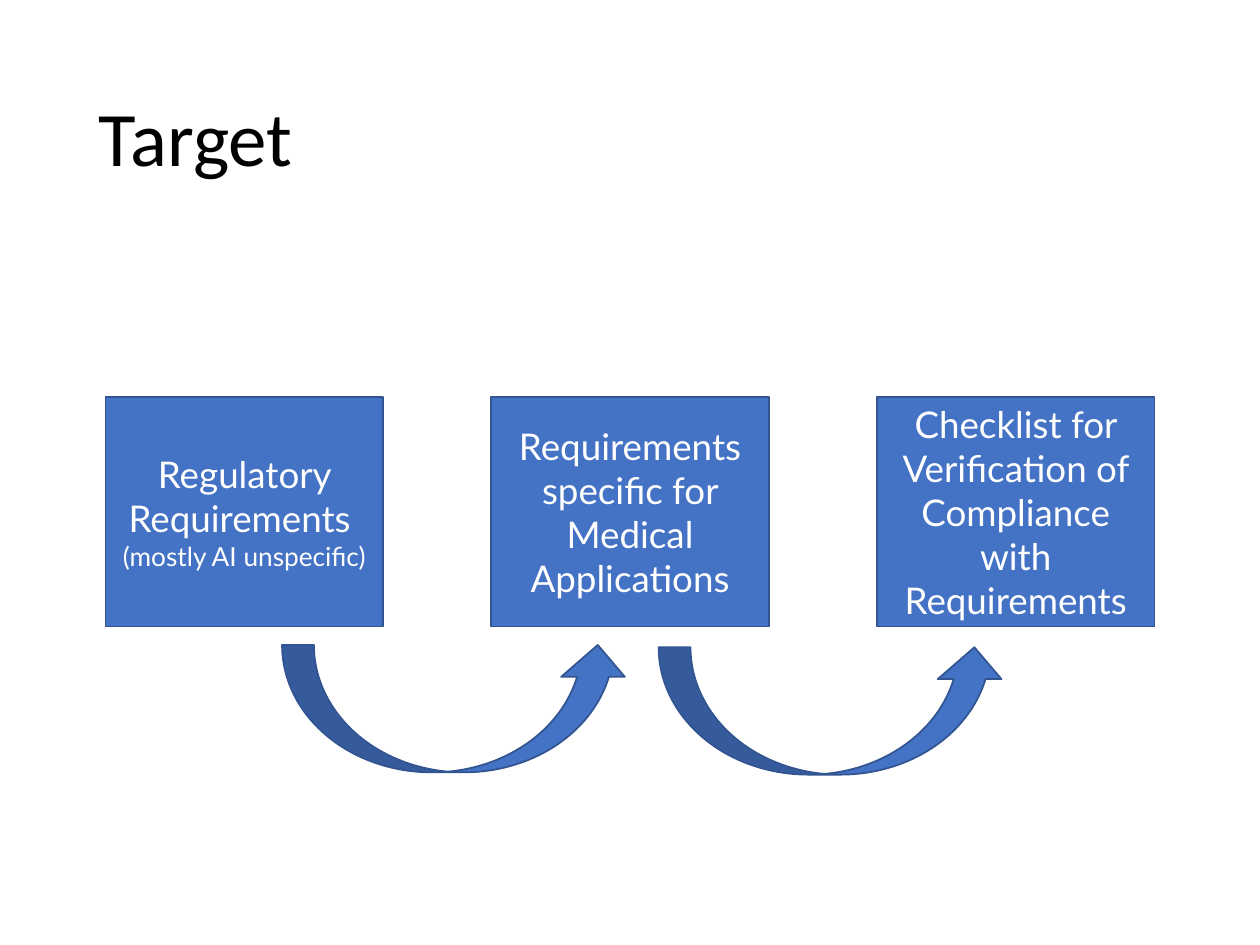
from pptx import Presentation
from pptx.dml.color import RGBColor
from pptx.enum.shapes import MSO_SHAPE
from pptx.enum.text import MSO_ANCHOR, PP_ALIGN
from pptx.util import Pt

COLORS = {"title": "000000", "fill": "4472C4", "line": "325491", "label": "FFFFFF"}


def write_text(shape, text, *, size, font, color, align, line_spacing=1.0,
               note=None, note_size=None):
    """Fill the shape with one centred-in-height paragraph; a note goes on a smaller new line."""
    frame = shape.text_frame
    frame.word_wrap = True
    frame.vertical_anchor = MSO_ANCHOR.MIDDLE
    paragraph = frame.paragraphs[0]
    paragraph.alignment = align
    paragraph.line_spacing = line_spacing
    parts = [(text, size)]
    if note:
        parts.append((note, note_size))
    for index, (words, points) in enumerate(parts):
        if index:
            paragraph.add_line_break()
        run = paragraph.add_run()
        run.text = words
        run.font.size = Pt(points)
        run.font.name = font
        run.font.color.rgb = RGBColor.from_string(COLORS[color])


def add_blue_shape(kind, left, top, width, height):
    shape = slide.shapes.add_shape(kind, Pt(left), Pt(top), Pt(width), Pt(height))
    shape.shadow.inherit = False
    shape.fill.solid()
    shape.fill.fore_color.rgb = RGBColor.from_string(COLORS["fill"])
    shape.line.color.rgb = RGBColor.from_string(COLORS["line"])
    shape.line.width = Pt(1)
    return shape


presentation = Presentation()
presentation.slide_width = Pt(720)
presentation.slide_height = Pt(540)
slide = presentation.slides.add_slide(presentation.slide_layouts[6])

title = slide.shapes.add_textbox(Pt(49.5), Pt(28.75), Pt(621), Pt(104.4))
write_text(title, "Target", size=44, font="Calibri", color="title",
           align=PP_ALIGN.LEFT, line_spacing=0.9)

# Three boxes, evenly spaced around the middle of the slide
box_width, box_height, box_top, box_pitch = 158.7, 131.2, 226.8, 220.4
first_left = (720 - box_width) / 2 - box_pitch
steps = [
    ("Regulatory Requirements ", "(mostly AI unspecific)"),
    ("Requirements specific for Medical Applications", None),
    ("Checklist for Verification of Compliance with Requirements", None),
]
for index, (label, note) in enumerate(steps):
    box = add_blue_shape(MSO_SHAPE.RECTANGLE, first_left + index * box_pitch,
                         box_top, box_width, box_height)
    write_text(box, label, size=21, font="Lato", color="label",
               align=PP_ALIGN.CENTER, note=note, note_size=15)

# Arrows leading from each box to the next
for left, top in [(161.2, 368.6), (376.4, 369.9)]:
    add_blue_shape(MSO_SHAPE.CURVED_UP_ARROW, left, top, 198.6, 72.8)

presentation.save("out.pptx")
